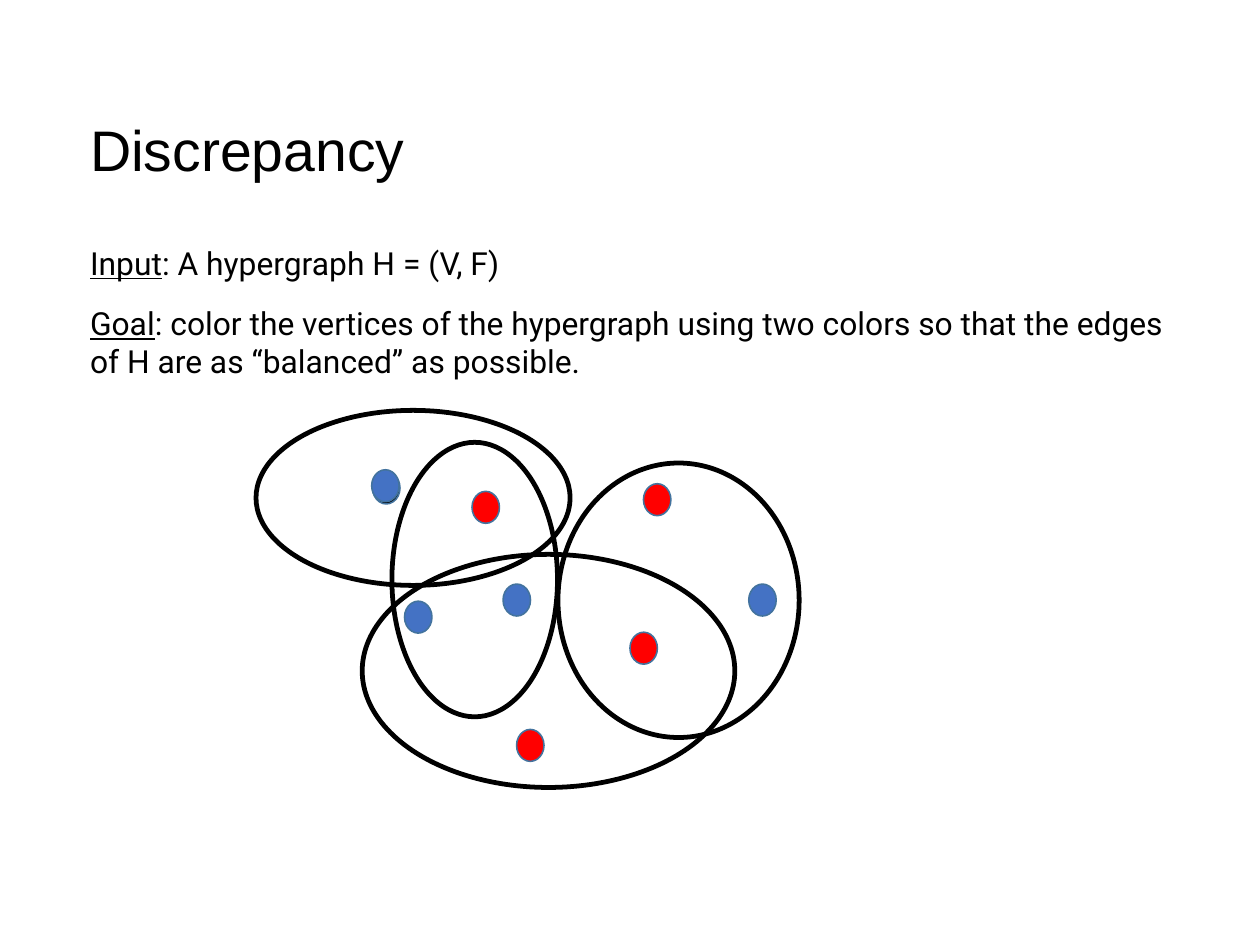
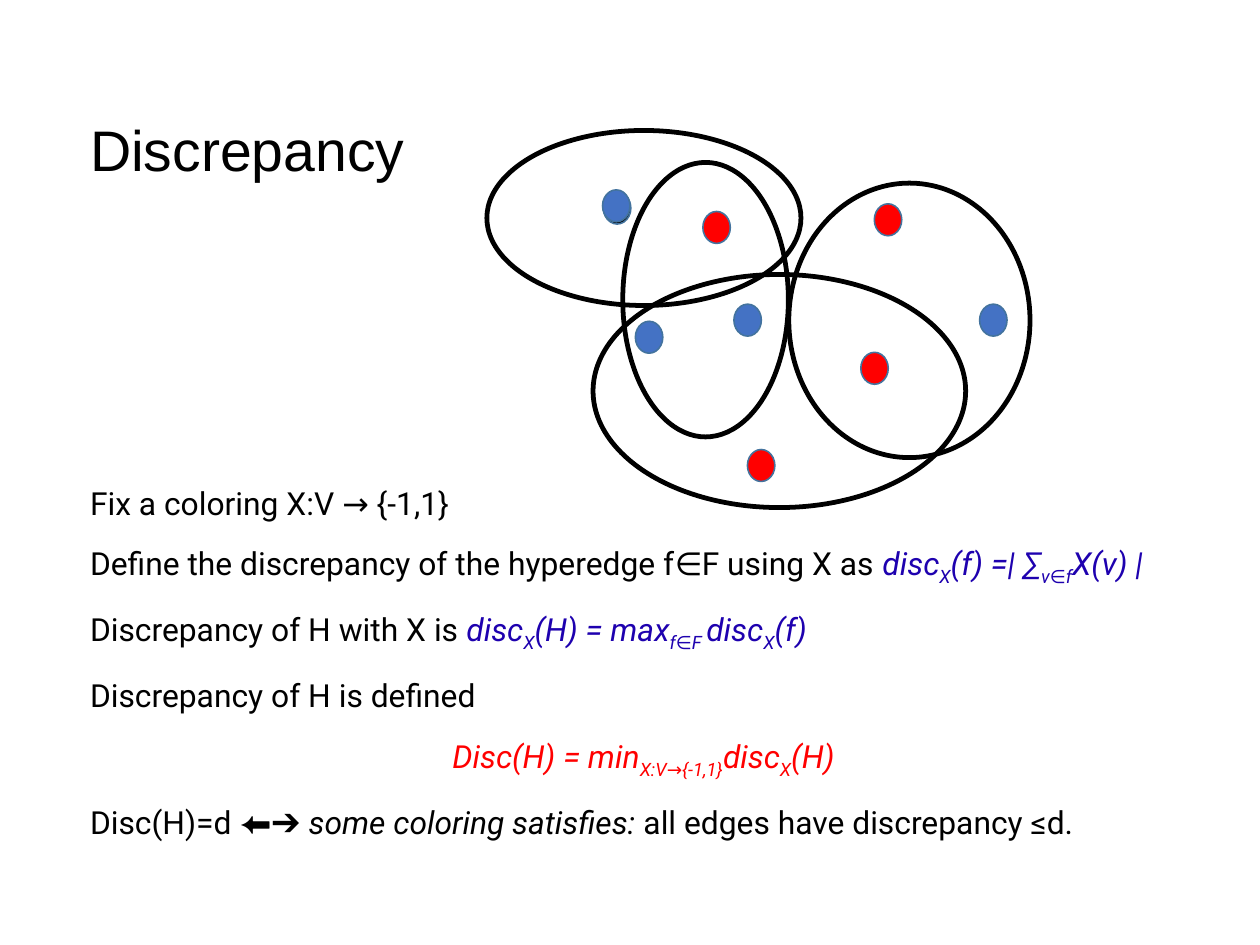
"""Build two slides that introduce hypergraph discrepancy."""
import pptx
import pptx.dml.color
import pptx.enum.shapes
import pptx.enum.text
import pptx.oxml.ns
import pptx.util
from lxml import etree

Cm = pptx.util.Cm
Pt = pptx.util.Pt
ALIGN = pptx.enum.text.PP_ALIGN
ANCHOR = pptx.enum.text.MSO_ANCHOR

COLORS = {
    "black": "000000",
    "red": "FF0000",
    "blue": "4472C4",
    "formula": "1E01AF",
    "outline": "43739E",
}
STYLES = {
    "plain": {},
    "underline": {"underline": True},
    "italic": {"italic": True},
    "formula": {"color": "formula", "italic": True},
    "formula sub": {"color": "formula", "italic": True, "subscript": True},
    "result": {"color": "red", "italic": True},
    "result sub": {"color": "red", "italic": True, "subscript": True},
}

TITLE_BOX = (2, 1.88, 23.5, 2.84)
BODY_LEFT, BODY_WIDTH, BODY_BOTTOM = 2, 24.6, 18.64

SLIDES = [
    {
        "title": "Discrepancy",
        "body_top": 5.41,
        "diagram": (5.69, 9.12),
        "body": [
            (ALIGN.LEFT, [("Input", "underline"), (": A hypergraph H = (V, F)", "plain")]),
            (ALIGN.LEFT, [
                ("Goal", "underline"),
                (": color the vertices of the hypergraph using two colors so that "
                 "the edges of H are as “balanced” as possible.", "plain"),
            ]),
        ],
    },
    {
        "title": "Discrepancy",
        "body_top": 10.74,
        "diagram": (10.82, 2.9),
        "body": [
            (ALIGN.LEFT, [("Fix a coloring X:V → {-1,1}", "plain")]),
            (ALIGN.LEFT, [
                ("Define the discrepancy of the hyperedge f∈F using X as ", "plain"),
                ("disc", "formula"), ("X", "formula sub"), ("(f) =| ∑", "formula"),
                ("v∈f", "formula sub"), ("X(v) |", "formula"),
            ]),
            (ALIGN.LEFT, [
                ("Discrepancy of H with X is ", "plain"),
                ("disc", "formula"), ("X", "formula sub"), ("(H) = max", "formula"),
                ("f∈F ", "formula sub"), ("disc", "formula"), ("X", "formula sub"),
                ("(f)", "formula"),
            ]),
            (ALIGN.LEFT, [("Discrepancy of H is defined", "plain")]),
            (ALIGN.CENTER, [
                ("Disc(H) = min", "result"), ("X:V→{-1,1}", "result sub"),
                ("disc", "result"), ("X", "result sub"), ("(H)", "result"),
            ]),
            (ALIGN.LEFT, [
                ("Disc(H)=d ⬅➔ ", "plain"), ("some coloring satisfies: ", "italic"),
                ("all edges have discrepancy ≤d.", "plain"),
            ]),
        ],
    },
]

HYPEREDGES = [
    (0, 0, 6.98, 3.89),
    (6.71, 1.17, 5.36, 6.1),
    (3.02, 0.71, 3.68, 6.1),
    (2.36, 3.2, 8.28, 5.18),
]
VERTEX_SIZE = (0.61, 0.71)
VERTICES = [
    ("black", 2.59, 1.37),
    ("red", 8.61, 1.63),
    ("red", 8.31, 4.93),
    ("red", 5.79, 7.09),
    ("red", 4.8, 1.8),
    ("blue", 10.95, 3.86),
    ("blue", 2.57, 1.32),
    ("blue", 3.3, 4.24),
    ("blue", 5.49, 3.86),
]


def rgb(name):
    return pptx.dml.color.RGBColor.from_string(COLORS[name])


def place(shape, left, top, width, height):
    shape.left, shape.top = Cm(left), Cm(top)
    shape.width, shape.height = Cm(width), Cm(height)


def prepare_frame(text_frame, anchor):
    text_frame.margin_left = text_frame.margin_right = 0
    text_frame.margin_top = text_frame.margin_bottom = 0
    text_frame.word_wrap = True
    text_frame.auto_size = pptx.enum.text.MSO_AUTO_SIZE.NONE
    text_frame.vertical_anchor = anchor


def format_font(font, name, size, color="black"):
    font.name = name
    font.size = Pt(size)
    font.color.rgb = rgb(color)


def add_title(slide, text):
    title = slide.shapes.title
    place(title, *TITLE_BOX)
    prepare_frame(title.text_frame, ANCHOR.MIDDLE)
    title.text_frame.text = text
    paragraph = title.text_frame.paragraphs[0]
    paragraph.alignment = ALIGN.LEFT
    format_font(paragraph.runs[0].font, "Arial", 36)


def remove_bullet(paragraph):
    properties = paragraph._p.get_or_add_pPr()
    properties.set("marL", "0")
    properties.set("indent", "0")
    etree.SubElement(properties, pptx.oxml.ns.qn("a:buNone"))


def add_body(slide, top, paragraphs):
    body = slide.placeholders[1]
    place(body, BODY_LEFT, top, BODY_WIDTH, BODY_BOTTOM - top)
    text_frame = body.text_frame
    prepare_frame(text_frame, ANCHOR.TOP)
    for index, (alignment, pieces) in enumerate(paragraphs):
        paragraph = text_frame.add_paragraph() if index else text_frame.paragraphs[0]
        remove_bullet(paragraph)
        paragraph.alignment = alignment
        paragraph.space_before = Pt(0)
        paragraph.space_after = Pt(14.2)
        for text, style_name in pieces:
            style = STYLES[style_name]
            run = paragraph.add_run()
            run.text = text
            format_font(run.font, "Roboto", 20, style.get("color", "black"))
            run.font.italic = style.get("italic")
            run.font.underline = style.get("underline")
            if style.get("subscript"):
                run._r.get_or_add_rPr().set("baseline", "-25000")


def add_ellipse(group, box, fill, line, line_width):
    shape = group.shapes.add_shape(
        pptx.enum.shapes.MSO_SHAPE.OVAL, *(Cm(length) for length in box))
    shape.shadow.inherit = False
    if fill:
        shape.fill.solid()
        shape.fill.fore_color.rgb = rgb(fill)
    else:
        shape.fill.background()
    shape.line.color.rgb = rgb(line)
    shape.line.width = Pt(line_width)


def add_hypergraph(slide, left, top):
    edge_group = slide.shapes.add_group_shape()
    vertex_group = slide.shapes.add_group_shape()
    for x, y, width, height in HYPEREDGES:
        add_ellipse(edge_group, (left + x, top + y, width, height), None, "black", 3)
    for color, x, y in VERTICES:
        add_ellipse(vertex_group, (left + x, top + y, *VERTEX_SIZE), color, "outline", 1)


def main():
    presentation = pptx.Presentation()
    presentation.slide_width, presentation.slide_height = Cm(28), Cm(21)
    for content in SLIDES:
        slide = presentation.slides.add_slide(presentation.slide_layouts[1])
        add_title(slide, content["title"])
        add_body(slide, content["body_top"], content["body"])
        add_hypergraph(slide, *content["diagram"])
    presentation.save("out.pptx")


if __name__ == "__main__":
    main()
